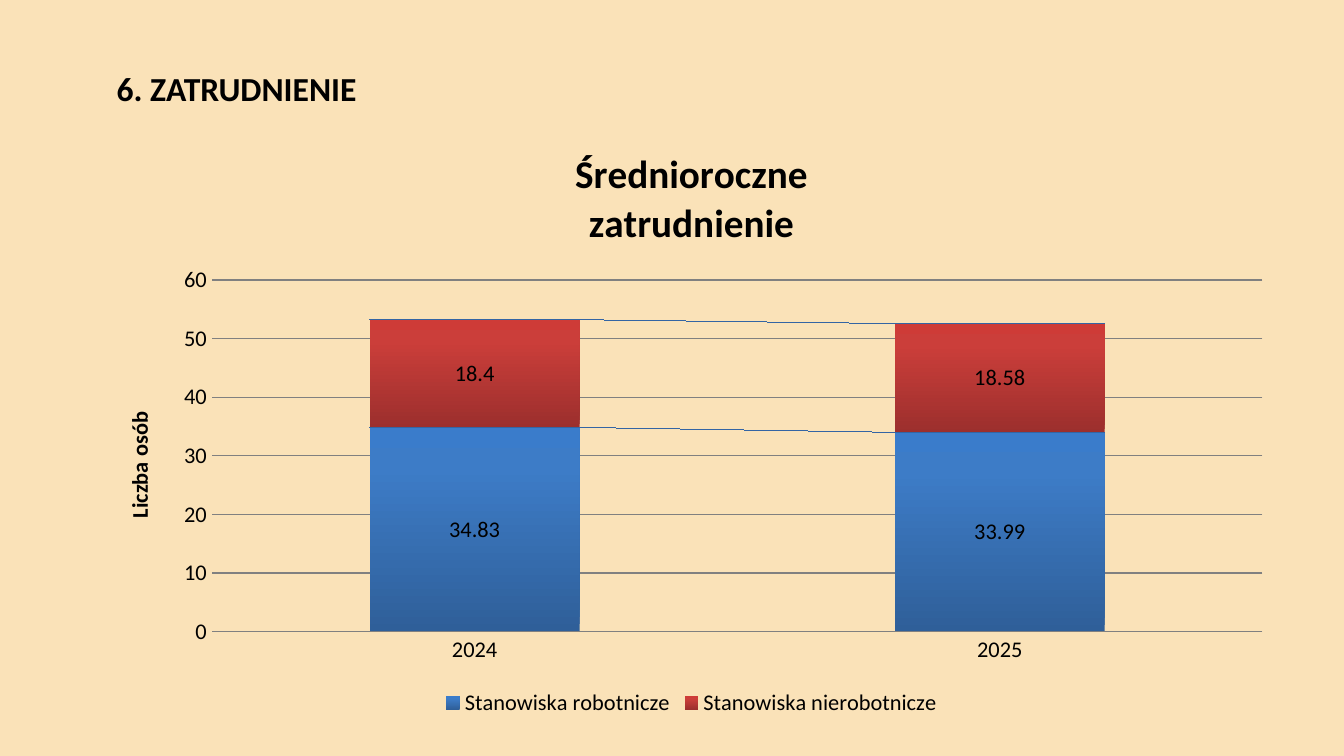
import pptx
import pptx.util
import pptx.chart.data
import pptx.dml.color
import pptx.enum.chart
import pptx.oxml
import pptx.oxml.ns
from pptx.util import Inches

RGBColor = pptx.dml.color.RGBColor
SAND = RGBColor(0xFA, 0xE2, 0xB8)
BLACK = RGBColor(0, 0, 0)
GRAY = RGBColor(0x80, 0x80, 0x80)
BLUE = RGBColor(0x3A, 0x6E, 0xA5)
BLUES = (RGBColor(0x2F, 0x5F, 0x99), RGBColor(0x3D, 0x7C, 0xC7),
         RGBColor(0x3A, 0x7C, 0xCB))
REDS = (RGBColor(0x9C, 0x2F, 0x2D), RGBColor(0xCB, 0x3E, 0x3A),
        RGBColor(0xCE, 0x3B, 0x37))

YEARS = ("2024", "2025")
STAFF = (
    ("Stanowiska robotnicze", (34.83, 33.99), BLUES),
    ("Stanowiska nierobotnicze", (18.4, 18.58), REDS),
)
SPACES = pptx.oxml.ns.nsdecls("c", "a")


def style(font, size=12, bold=False, color=BLACK):
    font.name = "Calibri"
    font.size = pptx.util.Pt(size)
    font.bold = bold
    font.color.rgb = color


def write(frame, text, **form):
    """Put each line of text in its own paragraph."""
    for i, line in enumerate(text.split("\n")):
        para = frame.add_paragraph() if i else frame.paragraphs[0]
        run = para.add_run()
        run.text = line
        style(run.font, **form)


def draw(line, color=GRAY):
    line.color.rgb = color
    line.width = pptx.util.Pt(0.75)


def shade(series, colors):
    """Fill a series with a gradient that rises from the bottom."""
    stops = "".join(
        f'<a:gs pos="{pos}"><a:srgbClr val="{color}"/></a:gs>'
        for pos, color in zip((0, 80000, 100000), colors))
    grad = pptx.oxml.parse_xml(
        f'<a:gradFill {SPACES} rotWithShape="1"><a:gsLst>{stops}</a:gsLst>'
        '<a:lin ang="16200000" scaled="0"/></a:gradFill>')
    series.format.fill.background()
    props = series._element.spPr
    props.replace(props.find(pptx.oxml.ns.qn("a:noFill")), grad)


def place(area, x, y, w, h):
    """Fix the inner plot area, in percent of the chart."""
    old = area.find(pptx.oxml.ns.qn("c:layout"))
    if old is not None:
        area.remove(old)
    sizes = "".join(f'<c:{k} val="{v / 100}"/>'
                    for k, v in (("x", x), ("y", y), ("w", w), ("h", h)))
    area.insert(0, pptx.oxml.parse_xml(
        f'<c:layout {SPACES}><c:manualLayout><c:layoutTarget val="inner"/>'
        '<c:xMode val="edge"/><c:yMode val="edge"/>'
        f'{sizes}</c:manualLayout></c:layout>'))


class Deck:
    def __init__(self):
        self.show = pptx.Presentation()
        self.show.slide_width = Inches(10)
        self.show.slide_height = Inches(10 * 9 / 16)
        self.slide = self.show.slides.add_slide(self.show.slide_layouts[6])
        fill = self.slide.background.fill
        fill.solid()
        fill.fore_color.rgb = SAND

    def text(self, words, x, y, w, h, **form):
        box = self.slide.shapes.add_textbox(
            Inches(x), Inches(y), Inches(w), Inches(h))
        box.text_frame.word_wrap = True
        write(box.text_frame, words, **form)

    def chart(self, x, y, w, h):
        data = pptx.chart.data.CategoryChartData()
        data.categories = YEARS
        for name, values, _ in STAFF:
            data.add_series(name, values)
        kind = pptx.enum.chart.XL_CHART_TYPE.COLUMN_STACKED
        chart = self.slide.shapes.add_chart(
            kind, Inches(x), Inches(y), Inches(w), Inches(h), data).chart
        style(chart.font, size=10)
        write(chart.chart_title.text_frame, "Średnioroczne\nzatrudnienie",
              size=21, bold=True)
        chart.chart_title.include_in_layout = False
        chart.has_legend = True
        chart.legend.position = pptx.enum.chart.XL_LEGEND_POSITION.BOTTOM
        chart.legend.include_in_layout = False
        style(chart.legend.font)
        self.axes(chart)
        self.bars(chart.plots[0])
        place(chart._chartSpace.chart.plotArea, 9.7, 26, 88.3, 58.9)

    def axes(self, chart):
        years, people = chart.category_axis, chart.value_axis
        for axis in (years, people):
            axis.major_tick_mark = pptx.enum.chart.XL_TICK_MARK.NONE
            style(axis.tick_labels.font)
        draw(years.format.line)
        people.format.line.fill.background()
        draw(people.major_gridlines.format.line)
        people.minimum_scale = 0
        people.maximum_scale = 60
        people.major_unit = 10
        frame = people.axis_title.text_frame
        write(frame, "Liczba osób", bold=True)
        frame._txBody.bodyPr.set("rot", "-5400000")
        frame._txBody.bodyPr.set("vert", "horz")

    def bars(self, plot):
        plot.gap_width = 150
        plot.overlap = 100
        plot.vary_by_categories = False
        for series, (_, _, colors) in zip(plot.series, STAFF):
            shade(series, colors)
            labels = series.data_labels
            labels.show_value = True
            style(labels.font)
        links = pptx.oxml.parse_xml(
            f'<c:serLines {SPACES}><c:spPr><a:ln w="9525"><a:solidFill>'
            f'<a:srgbClr val="{BLUE}"/></a:solidFill></a:ln></c:spPr>'
            '</c:serLines>')
        plot._element.find(pptx.oxml.ns.qn("c:overlap")).addnext(links)


def main():
    deck = Deck()
    deck.text("6. ZATRUDNIENIE", 0.77, 0.46, 8.5, 0.47, size=18, bold=True)
    deck.chart(0.72, 0.93, 8.85, 4.44)
    deck.show.save("out.pptx")


if __name__ == "__main__":
    main()
